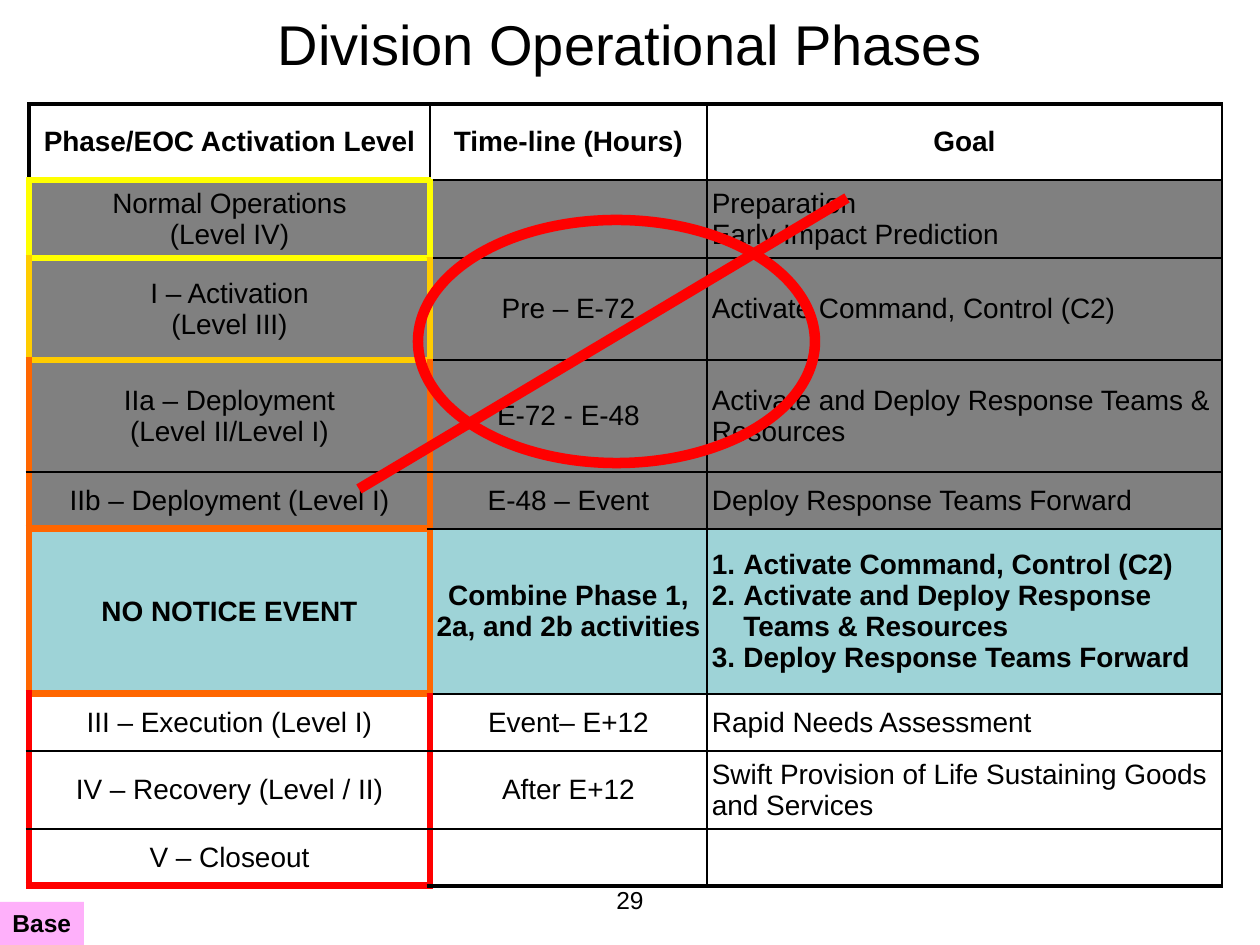
from lxml.etree import SubElement
from pptx import Presentation
from pptx.dml.color import RGBColor
from pptx.enum.shapes import MSO_CONNECTOR, MSO_SHAPE
from pptx.enum.text import MSO_ANCHOR, MSO_AUTO_SIZE, PP_ALIGN
from pptx.oxml.ns import qn
from pptx.util import Emu, Inches, Pt

BLACK, GRAY, TEAL, PINK = "000000", "808080", "9ED3D7", "FEB0FA"
YELLOW, GOLD, ORANGE, RED = "FFFF00", "FFCC00", "FF6600", "FF0000"
THIN, MEDIUM, THICK = 1, 2.25, 4.5
COLS = [401, 277, 515]
ROWS = [
    (76, None, BLACK, YELLOW, "Phase/EOC Activation Level", "Time-line (Hours)", "Goal"),
    (78, GRAY, YELLOW, YELLOW, "Normal Operations\n(Level IV)", "",
     "Preparation\nEarly Impact Prediction"),
    (102, GRAY, GOLD, GOLD, "I – Activation\n(Level III)", "Pre – E-72",
     "Activate Command, Control (C2)"),
    (112, GRAY, ORANGE, BLACK, "IIa – Deployment\n(Level II/Level I)", "E-72 - E-48",
     "Activate and Deploy Response Teams & Resources"),
    (57, GRAY, ORANGE, ORANGE, "IIb – Deployment (Level I)", "E-48 – Event",
     "Deploy Response Teams Forward"),
    (165, TEAL, ORANGE, ORANGE, "NO NOTICE EVENT", "Combine Phase 1, 2a, and 2b activities",
     "Activate Command, Control (C2)\nActivate and Deploy Response Teams & Resources\n"
     "Deploy Response Teams Forward"),
    (57, None, RED, BLACK, "III – Execution (Level I)", "Event– E+12", "Rapid Needs Assessment"),
    (78, None, RED, BLACK, "IV – Recovery (Level / II)", "After E+12",
     "Swift Provision of Life Sustaining Goods and Services"),
    (57, None, RED, RED, "V – Closeout", "", ""),
]


def px(n):
    """Turn pixels at 126 to the inch into EMU."""
    return Emu(round(n * 914400 / 126))


def rgb(value):
    """Turn a hex string into a colour."""
    return RGBColor.from_string(value)


def apply(obj, values):
    """Set each attribute of an object from a dict."""
    for name, value in values.items():
        setattr(obj, name, value)


def phase_edges(row, col):
    """Return the border colour and width of each side of a phase cell."""
    last = len(ROWS) - 1
    edge = ROWS[row][2]
    side = (edge, THICK if row else MEDIUM)
    top = (BLACK, THIN if row else MEDIUM)
    bottom = (BLACK, MEDIUM if row == last else THIN)
    inner = (BLACK, THIN)
    divider = side if row else inner
    if col == 0:
        below = ROWS[row][3]
        if row:
            above = ROWS[row - 1][3]
            top = (above, THIN if above == BLACK else THICK)
        bottom = (below, THIN if below == BLACK else THICK)
        return {"L": side, "R": divider, "T": top, "B": bottom}
    return {"L": divider if col == 1 else inner, "R": inner, "T": top, "B": bottom}


class Deck:
    """Hold the style and the current slide."""

    font = "Arial"

    def __init__(self, prs):
        """Start a title-only slide."""
        self.s = prs.slides.add_slide(prs.slide_layouts[5])

    def fill_text(self, tf, text, size, bold=False, align=PP_ALIGN.CENTER, numbered=False):
        """Fill a text frame with one paragraph a line."""
        for i, line in enumerate(text.split("\n")):
            p = tf.add_paragraph() if i else tf.paragraphs[0]
            p.alignment = align
            if numbered:
                pPr = p._p.get_or_add_pPr()
                pPr.set("marL", str(Inches(0.25)))
                pPr.set("indent", str(-Inches(0.25)))
                SubElement(pPr, qn("a:buAutoNum"), type="arabicPeriod")
            r = p.add_run()
            r.text = line
            apply(r.font, {"name": self.font, "size": Pt(size), "bold": bold})
            r.font.color.rgb = rgb(BLACK)

    def title(self, text, box):
        """Place the title."""
        sp = self.s.shapes.title
        apply(sp, dict(zip(("left", "top", "width", "height"), map(px, box))))
        sp.text_frame.vertical_anchor = MSO_ANCHOR.MIDDLE
        self.fill_text(sp.text_frame, text, 32)

    def text(self, text, box):
        """Add a centred text box."""
        tf = self.s.shapes.add_textbox(*map(px, box)).text_frame
        tf.word_wrap = True
        self.fill_text(tf, text, 14)

    def shape(self, kind, box, fill=None, line=None):
        """Add a preset shape."""
        sp = self.s.shapes.add_shape(kind, *map(px, box))
        sp.shadow.inherit = False
        self.paint(sp.fill, fill)
        self.paint(sp.line.fill, line)
        if line:
            sp.line.width = Pt(6)
        return sp

    def paint(self, fill, color):
        """Set a solid fill, or none."""
        if color:
            fill.solid()
            fill.fore_color.rgb = rgb(color)
        else:
            fill.background()

    def tag(self, text, box, fill):
        """Add a filled label."""
        tf = self.shape(MSO_SHAPE.RECTANGLE, box, fill).text_frame
        apply(tf, {"word_wrap": False, "auto_size": MSO_AUTO_SIZE.SHAPE_TO_FIT_TEXT,
                   "vertical_anchor": MSO_ANCHOR.TOP})
        self.fill_text(tf, text, 14, True, PP_ALIGN.LEFT)

    def line(self, ends, color):
        """Add a straight line."""
        cx = self.s.shapes.add_connector(MSO_CONNECTOR.STRAIGHT, *map(px, ends))
        cx.line.color.rgb = rgb(color)
        cx.line.width = Pt(6)
        SubElement(cx._element.spPr, qn("a:effectLst"))

    def borders(self, cell, edges):
        """Draw the four borders of a cell."""
        tcPr = cell._tc.get_or_add_tcPr()
        for side, (color, width) in edges.items():
            ln = SubElement(tcPr, qn("a:ln" + side), w=str(Pt(width)))
            SubElement(SubElement(ln, qn("a:solidFill")), qn("a:srgbClr"), val=color)

    def table(self, left, top):
        """Add the table of phases."""
        box = (left, top, sum(COLS), sum(row[0] for row in ROWS))
        t = self.s.shapes.add_table(len(ROWS), len(COLS), *map(px, box)).table
        apply(t, {"first_row": False, "horz_banding": False})
        for col, width in zip(t.columns, COLS):
            col.width = px(width)
        for i, (height, fill, _, _, *texts) in enumerate(ROWS):
            t.rows[i].height = px(height)
            for j, text in enumerate(texts):
                cell = t.cell(i, j)
                apply(cell, {"margin_left": px(5), "margin_right": px(5), "margin_top": 0,
                             "margin_bottom": 0, "vertical_anchor": MSO_ANCHOR.MIDDLE})
                self.borders(cell, phase_edges(i, j))
                self.paint(cell.fill, fill)
                goal = j == 2 and i > 0
                if text:
                    self.fill_text(cell.text_frame, text, 16, i == 0 or fill == TEAL,
                                   PP_ALIGN.LEFT if goal else PP_ALIGN.CENTER,
                                   goal and fill == TEAL)


def main():
    """Build the slide."""
    prs = Presentation()
    apply(prs, {"slide_width": Inches(10), "slide_height": Inches(7.5)})
    d = Deck(prs)
    d.title("Division Operational Phases", (0, 0, 1260, 87))
    d.text("29", (483, 879, 294, 66))
    d.table(29, 104)
    d.tag("Base", (0, 902, 84, 43), PINK)
    d.shape(MSO_SHAPE.OVAL, (418, 220, 397, 243), line=RED)
    d.line((359, 489, 847, 198), RED)
    prs.save("out.pptx")


if __name__ == "__main__":
    main()
